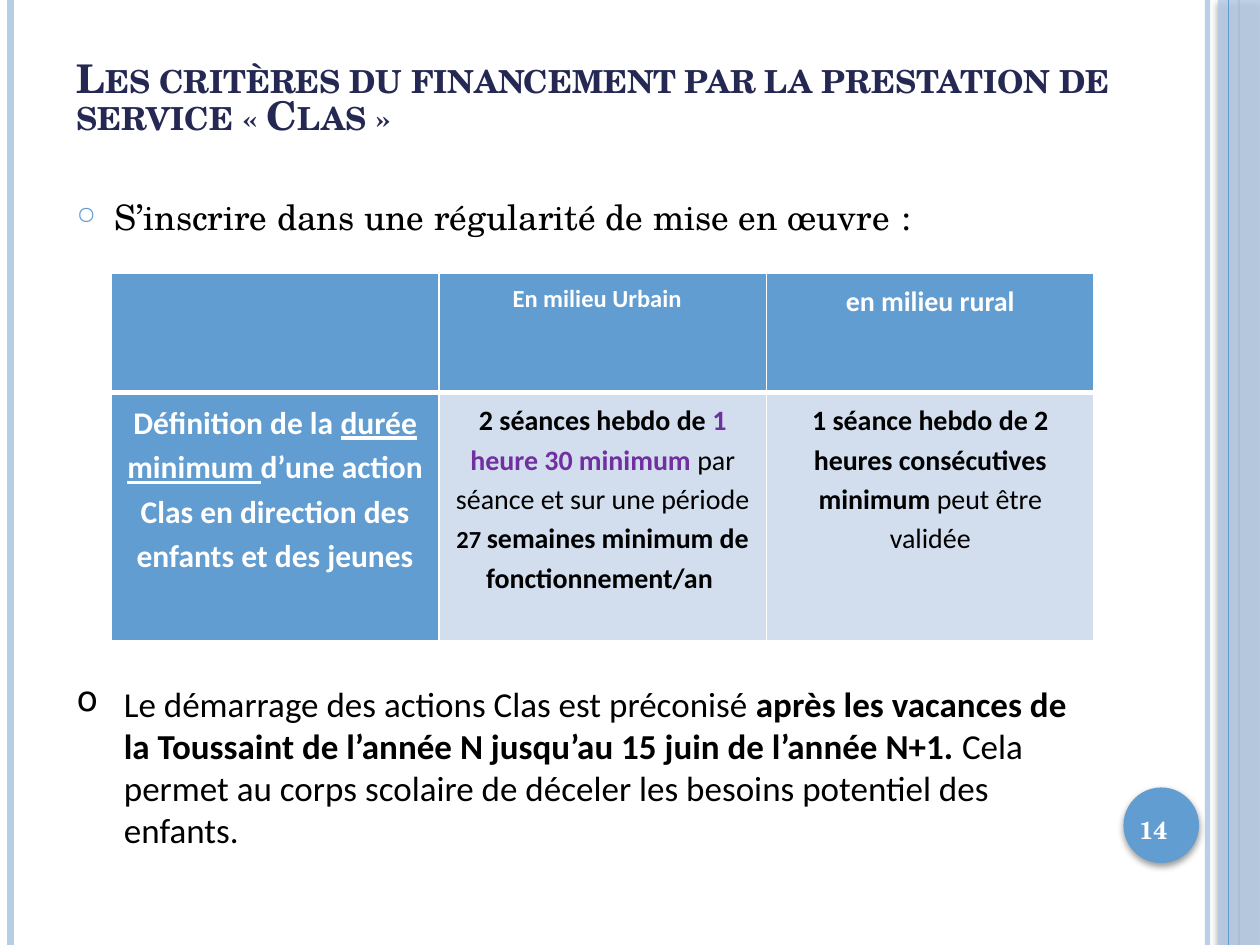
"""Build the slide on the financing criteria of the Clas scheme."""
from lxml.etree import SubElement as Sub
from pptx import Presentation
from pptx.dml.color import RGBColor as RGB
from pptx.enum.shapes import MSO_CONNECTOR as LINK, MSO_SHAPE as SHAPE
from pptx.enum.text import MSO_ANCHOR as ANCHOR, MSO_AUTO_SIZE as FIT, PP_ALIGN as ALIGN
from pptx.oxml.ns import qn
from pptx.util import Pt

BLUE = RGB(0x62, 0x9D, 0xD1)
PALE = RGB(0xB7, 0xCC, 0xE5)
TINT = RGB(0xD2, 0xDE, 0xED)
NAVY = RGB(0x24, 0x28, 0x52)
PURPLE = RGB(0x70, 0x30, 0xA0)
WHITE = RGB(0xFF, 0xFF, 0xFF)
BLACK = RGB(0, 0, 0)
SERIF = "TeX Gyre Schola"
SANS = "Calibri"


def fade(shape, alpha):
    """Set the opacity, in percent, of the shape's first colour."""
    color = shape._element.spPr.find(".//" + qn("a:srgbClr"))
    Sub(color, qn("a:alpha"), val=str(alpha * 1000))


def add_rule(slide, x, width, color, alpha=100):
    """Draw a full-height vertical line."""
    rule = slide.shapes.add_connector(LINK.STRAIGHT, Pt(x), Pt(0), Pt(x), Pt(540))
    rule.line.color.rgb = color
    rule.line.width = Pt(width)
    if alpha < 100:
        fade(rule, alpha)
    Sub(rule._element.spPr, qn("a:effectLst"))


def add_block(slide, kind, box, color, alpha=100):
    """Draw a filled shape with a soft shadow below it."""
    block = slide.shapes.add_shape(kind, *map(Pt, box))
    block.fill.solid()
    block.fill.fore_color.rgb = color
    block.line.fill.background()
    if alpha < 100:
        fade(block, alpha)
    block.shadow.inherit = False
    effects = block._element.spPr.find(qn("a:effectLst"))
    shade = Sub(effects, qn("a:outerShdw"), blurRad=str(Pt(4)), dist=str(Pt(2)),
                dir="5400000", rotWithShape="0")
    tone = Sub(shade, qn("a:srgbClr"), val=str(BLACK))
    Sub(tone, qn("a:alpha"), val="40000")


def style(font, name, size, color, bold=None):
    """Set the main traits of a font."""
    font.name, font.size, font.bold = name, Pt(size), bold
    font.color.rgb = color


def add_runs(para, *parts):
    """Add runs given as pairs of text and font traits."""
    for text, traits in parts:
        run = para.add_run()
        run.text = text
        for key, value in traits.items():
            if key == "color":
                run.font.color.rgb = value
            else:
                setattr(run.font, key, value)


def add_bullet(para, mark, indent, color=None, scale=None):
    """Give a paragraph a hanging bullet."""
    props = para._p.get_or_add_pPr()
    props.set("marL", str(Pt(indent)))
    props.set("indent", str(-Pt(indent)))
    nodes = []
    if color is not None:
        tint = Sub(props, qn("a:buClr"))
        Sub(tint, qn("a:srgbClr"), val=str(color))
        nodes.append(tint)
    if scale:
        nodes.append(Sub(props, qn("a:buSzPct"), val=str(scale * 1000)))
    nodes.append(Sub(props, qn("a:buChar"), char=mark))
    final = props.find(qn("a:defRPr"))
    if final is not None:
        for node in nodes:
            final.addprevious(node)


def add_text(slide, box):
    """Add a wrapping text box and return its frame."""
    frame = slide.shapes.add_textbox(*map(Pt, box)).text_frame
    frame.word_wrap = True
    return frame


def set_title(slide):
    """Place and format the title."""
    title = slide.shapes.title
    title.left, title.top, title.width, title.height = map(Pt, (36.7, 31.7, 617.8, 51.1))
    frame = title.text_frame
    frame.text = "Les critères du financement par la prestation de service « Clas »"
    frame.auto_size = FIT.NONE
    frame.vertical_anchor = ANCHOR.BOTTOM
    para = frame.paragraphs[0]
    para.alignment, para.line_spacing = ALIGN.LEFT, 0.8
    font = para.runs[0].font
    style(font, SERIF, 22.6, NAVY, True)
    font._element.set("cap", "small")


def add_body(slide):
    """Add the two bullets that stand above and below the table."""
    frame = add_text(slide, (36.7, 110.9, 588.2, 383.8))
    first, last = frame.paragraphs[0], frame.add_paragraph()
    first.line_spacing, first.space_before = 0.9, Pt(6)
    style(first.font, SERIF, 20, BLACK)
    add_bullet(first, "○", 21.6, BLUE, 70)
    add_runs(first, ("S’inscrire dans une régularité de mise en œuvre\u00a0:", {}))
    last.space_before = Pt(254)
    style(last.font, SANS, 20, BLACK)
    add_bullet(last, "o", 27)
    add_runs(
        last,
        ("Le démarrage des actions Clas est préconisé ", {}),
        ("après les vacances de la Toussaint de l’année N jusqu’au 15 juin "
         "de l’année N+1. ", {"bold": True}),
        ("Cela permet au corps scolaire de déceler les besoins potentiel des enfants.", {}))


def set_edges(cell, head):
    """Draw white cell borders, thick between header and body."""
    props = cell._tc.get_or_add_tcPr()
    thick = "lnB" if head else "lnT"
    for side in ("lnL", "lnR", "lnT", "lnB"):
        edge = Sub(props, qn("a:" + side), w=str(Pt(3 if side == thick else 0.96)))
        Sub(Sub(edge, qn("a:solidFill")), qn("a:srgbClr"), val=str(WHITE))


def fill_cell(cell, head, fill, size, color, bold, parts):
    """Format one table cell and write its runs."""
    set_edges(cell, head)
    cell.fill.solid()
    cell.fill.fore_color.rgb = fill
    cell.margin_left = cell.margin_right = Pt(5)
    cell.margin_top = cell.margin_bottom = Pt(3.6)
    para = cell.text_frame.paragraphs[0]
    para.alignment, para.line_spacing = ALIGN.CENTER, 1.15
    style(para.font, SANS, size, color, bold)
    add_runs(para, *parts)


def add_grid(slide):
    """Add the table of session lengths."""
    strong = {"bold": True}
    rows = [
        [(BLUE, 14, WHITE, True, []),
         (BLUE, 14, WHITE, True, [("En milieu Urbain \u00a0", {})]),
         (BLUE, 16, WHITE, True, [("en milieu rural", {})])],
        [(BLUE, 18, WHITE, True, [
            ("Définition de la ", {}),
            ("durée minimum ", {"underline": True}),
            ("d’une action Clas en direction des enfants et des jeunes", {})]),
         (TINT, 16, BLACK, None, [
             ("2 séances hebdo de ", strong),
             ("1 heure 30 minimum ", {"bold": True, "color": PURPLE}),
             ("par séance et sur une période ", {}),
             ("27 ", {"bold": True, "size": Pt(14)}),
             ("semaines minimum de fonctionnement/an ", strong)]),
         (TINT, 16, BLACK, None, [
             ("1 séance hebdo de 2 heures consécutives minimum", strong),
             (" peut être validée", {})])],
    ]
    high = (68, 142)
    frame = slide.shapes.add_table(2, 3, Pt(63.6), Pt(156.4), Pt(561.6), Pt(sum(high)))
    table = frame.table
    for i, row in enumerate(rows):
        table.rows[i].height = Pt(high[i])
        for j, data in enumerate(row):
            fill_cell(table.cell(i, j), i == 0, *data)


def add_number(slide):
    """Write the slide number on its disc."""
    frame = add_text(slide, (635, 453.6, 48.2, 41))
    frame.vertical_anchor = ANCHOR.MIDDLE
    para = frame.paragraphs[0]
    para.alignment = ALIGN.CENTER
    style(para.font, SERIF, 14, WHITE, True)
    add_runs(para, ("14", {}))


def main():
    """Build and save the slide."""
    deck = Presentation()
    deck.slide_width, deck.slide_height = Pt(720), Pt(540)
    slide = deck.slides.add_slide(deck.slide_layouts[5])
    add_rule(slide, 690, 3, PALE, 93)
    add_rule(slide, 6, 4.5, PALE)
    add_rule(slide, 708, 1.5, BLUE)
    add_block(slide, SHAPE.RECTANGLE, (696, 0, 24, 540), PALE, 87)
    add_rule(slide, 702, 0.75, BLUE)
    add_block(slide, SHAPE.OVAL, (642, 450, 43.2, 43.2), BLUE)
    set_title(slide)
    add_body(slide)
    add_grid(slide)
    add_number(slide)
    deck.save("out.pptx")


if __name__ == "__main__":
    main()
